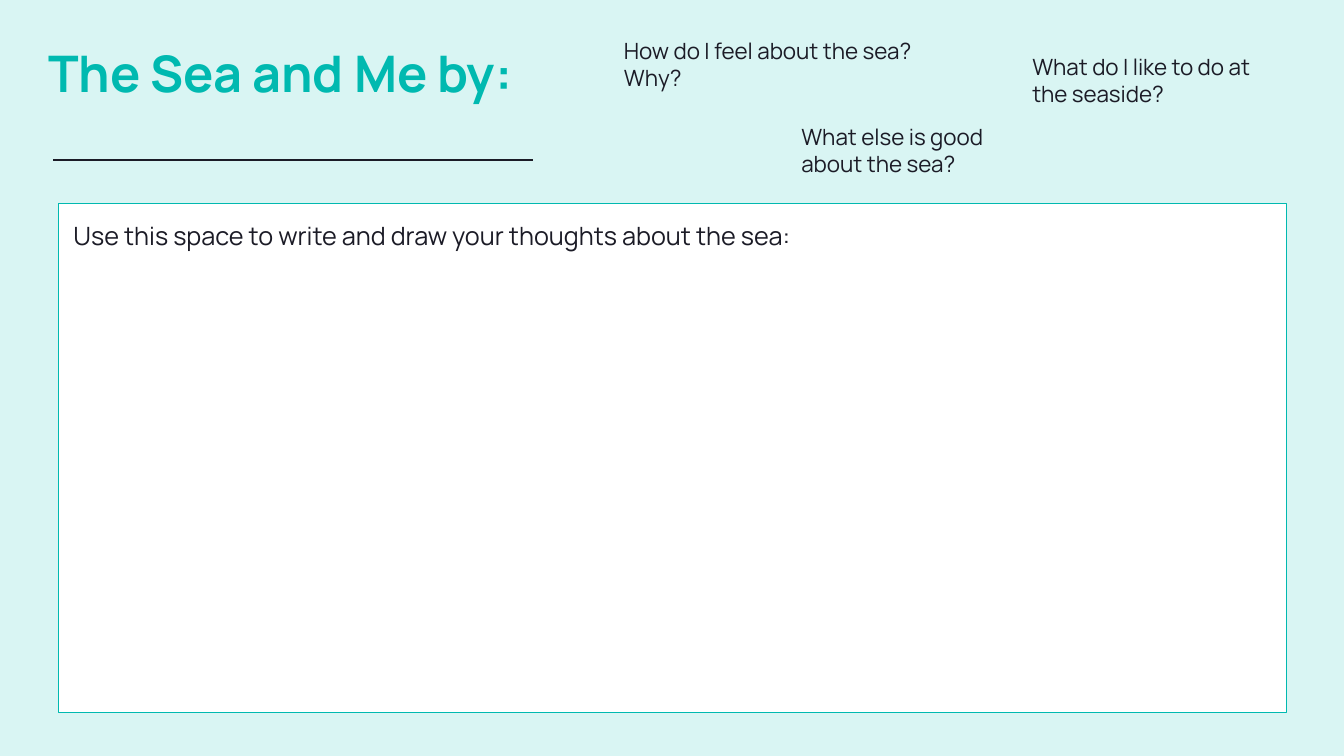
from lxml import etree
from pptx import Presentation
from pptx.dml.color import RGBColor
from pptx.enum import shapes, text
from pptx.util import Inches, Pt

TEAL, INK, WHITE, PALE = "00B9B0", "1B1B26", "FFFFFF", "D9F5F3"
FONT = "Manrope"


def rgb(value):
    return RGBColor.from_string(value)


def add_text(slide, box, words, size=16, color=INK, bold=False, inset=0.1, grow=True):
    sp = slide.shapes.add_textbox(*map(Inches, box))
    tf = sp.text_frame
    tf.word_wrap = True
    tf.auto_size = text.MSO_AUTO_SIZE.SHAPE_TO_FIT_TEXT if grow else text.MSO_AUTO_SIZE.NONE
    tf.margin_left = tf.margin_right = Inches(0.1)
    tf.margin_top = tf.margin_bottom = Inches(inset)
    r = tf.paragraphs[0].add_run()
    r.text = words
    r.font.name, r.font.size, r.font.bold = FONT, Pt(size), bold
    r.font.color.rgb = rgb(color)


def add_heading(slide, left, top, width, height):
    add_text(slide, (left, top, width, height), "The Sea and Me by:",
             size=36, color=TEAL, bold=True, grow=False)
    # Line for the child's name
    x, y = left + 0.15, top + 1.27
    line = slide.shapes.add_connector(shapes.MSO_CONNECTOR.STRAIGHT, Inches(x), Inches(y),
                                      Inches(x + 4.76), Inches(y))
    line.line.color.rgb = rgb(INK)
    line.line.width = Pt(1.5)
    etree.SubElement(line._element.spPr,
                     "{http://schemas.openxmlformats.org/drawingml/2006/main}effectLst")


def add_prompts(slide, left, top):
    prompts = [
        (0, 0, 3.33, "How do I feel about the sea? Why?"),
        (4.05, 0.16, 2.57, "What do I like to do at the seaside?"),
        (1.76, 0.85, 2.63, "What else is good about the sea?"),
    ]
    for dx, dy, width, words in prompts:
        add_text(slide, (left + dx, top + dy, width, 0.74), words)


def add_writing_space(slide, left, top, width, height):
    sp = slide.shapes.add_shape(shapes.MSO_SHAPE.RECTANGLE,
                                *map(Inches, (left, top, width, height)))
    sp.shadow.inherit = False
    sp.fill.solid()
    sp.fill.fore_color.rgb = rgb(WHITE)
    sp.line.color.rgb = rgb(TEAL)
    sp.line.width = Pt(1)
    add_text(slide, (left + 0.05, top + 0.12, 8.54, 0.4),
             "Use this space to write and draw your thoughts about the sea:",
             size=18, inset=0.05)


def main():
    prs = Presentation()
    prs.slide_width, prs.slide_height = Inches(13.33), Inches(7.5)
    slide = prs.slides.add_slide(prs.slide_layouts[6])
    slide.background.fill.solid()
    slide.background.fill.fore_color.rgb = rgb(PALE)
    add_heading(slide, 0.38, 0.32, 9.83, 2.33)
    add_prompts(slide, 6.09, 0.27)
    add_writing_space(slide, 0.58, 2.02, 12.18, 5.05)
    prs.save("out.pptx")


if __name__ == "__main__":
    main()
